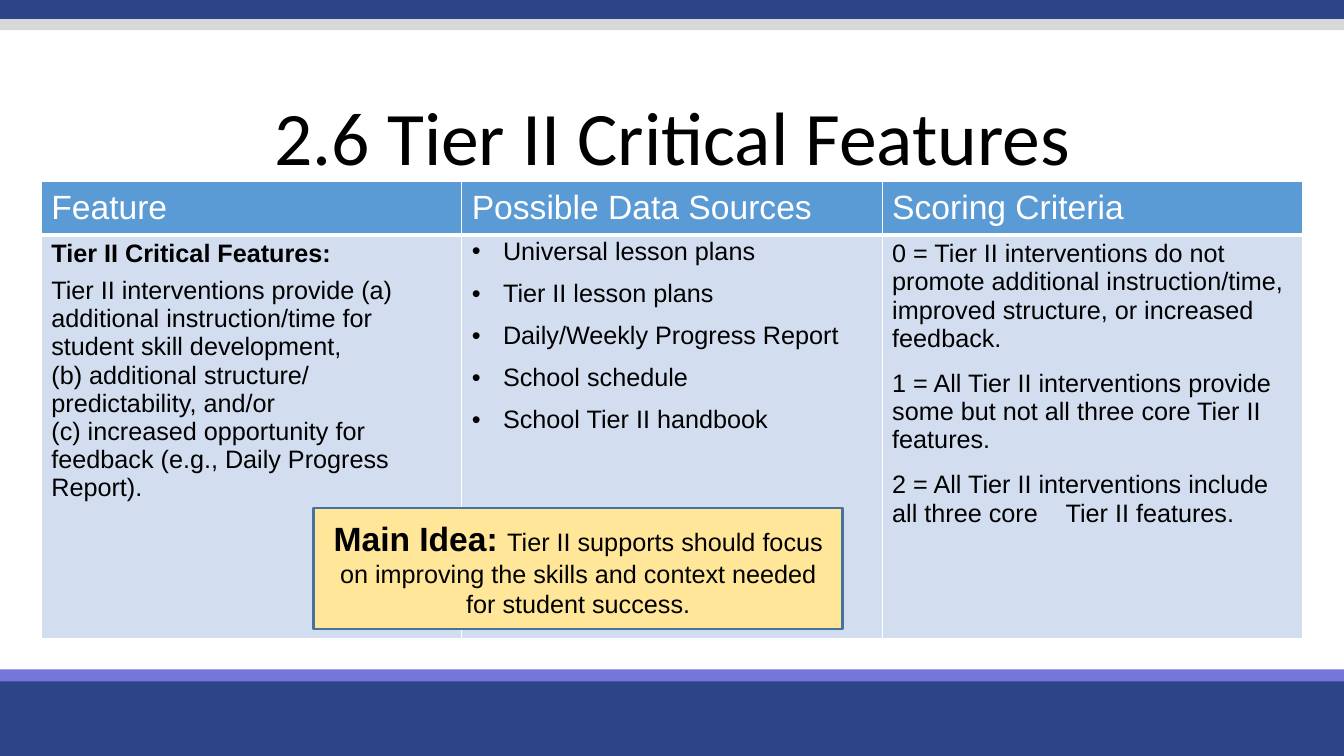
import pptx
import pptx.dml.color
import pptx.enum.shapes
import pptx.enum.text
import pptx.oxml.ns
import pptx.util
from lxml import etree
from pptx.util import Inches

RGBColor = pptx.dml.color.RGBColor
ALIGN = pptx.enum.text.PP_ALIGN
MIDDLE = pptx.enum.text.MSO_ANCHOR.MIDDLE

BLACK = RGBColor(0x00, 0x00, 0x00)
WHITE = RGBColor(0xFF, 0xFF, 0xFF)
NAVY = RGBColor(0x2E, 0x44, 0x88)
GREY = RGBColor(0xD8, 0xD8, 0xD8)
VIOLET = RGBColor(0x74, 0x76, 0xDA)
HEADER_BLUE = RGBColor(0x5B, 0x9B, 0xD5)
PALE_BLUE = RGBColor(0xD2, 0xDE, 0xEF)
YELLOW = RGBColor(0xFF, 0xE6, 0x99)
OUTLINE_BLUE = RGBColor(0x43, 0x73, 0x9E)

SLIDE_WIDTH = 13.33
BARS = [(0, 0.19, NAVY), (0.19, 0.11, GREY), (6.7, 0.8, NAVY), (6.64, 0.12, VIOLET)]

HEADERS = ["Feature", "Possible Data Sources", "Scoring Criteria"]
FEATURE = [
    "Tier II Critical Features:",
    "Tier II interventions provide (a) additional instruction/time for",
    "student skill development,",
    "(b) additional structure/ predictability, and/or",
    "(c) increased opportunity for feedback (e.g., Daily Progress Report).",
]
SOURCES = [
    "Universal lesson plans",
    "Tier II lesson plans",
    "Daily/Weekly Progress Report",
    "School schedule",
    "School Tier II handbook",
]
CRITERIA = [
    "0 = Tier II interventions do not promote additional instruction/time, "
    "improved structure, or increased feedback.",
    "1 = All Tier II interventions provide some but not all three core Tier II features.",
    "2 = All Tier II interventions include all three core\tTier II features.",
]


def add_xml(parent, tag, **attributes):
    return etree.SubElement(parent, pptx.oxml.ns.qn(tag), attributes)


def format_run(r, size, color=BLACK, bold=False, font="Arial"):
    r.font.name = font
    r.font.size = pptx.util.Pt(size)
    r.font.bold = bold
    r.font.color.rgb = color


def add_box(s, left, top, width, height, color):
    """Add a flat rectangle without an outline."""
    sp = s.shapes.add_shape(
        pptx.enum.shapes.MSO_SHAPE.RECTANGLE,
        Inches(left), Inches(top), Inches(width), Inches(height))
    sp.shadow.inherit = False
    sp.fill.solid()
    sp.fill.fore_color.rgb = color
    sp.line.fill.background()
    return sp


def set_title(s, text):
    sp = s.shapes.title
    sp.left, sp.top = Inches(1.41), Inches(0.99)
    sp.width, sp.height = Inches(10.52), Inches(0.81)
    tf = sp.text_frame
    tf.text = text
    tf.vertical_anchor = MIDDLE
    p = tf.paragraphs[0]
    p.alignment = ALIGN.CENTER
    p.line_spacing = 0.9
    format_run(p.runs[0], 54, font="Calibri")


def style_cell(cell, fill, bottom_width=1):
    """Give a cell white borders and a plain fill."""
    tc_pr = cell._tc.get_or_add_tcPr()
    for side, width in zip("LRTB", (1, 1, 1, bottom_width)):
        ln = add_xml(tc_pr, f"a:ln{side}", w=str(pptx.util.Pt(width)))
        add_xml(add_xml(ln, "a:solidFill"), "a:srgbClr", val=str(WHITE))
    cell.fill.solid()
    cell.fill.fore_color.rgb = fill


def fill_cell(cell, lines, size=18, color=BLACK):
    tf = cell.text_frame
    tf.text = "\n".join(lines)
    for p in tf.paragraphs:
        for r in p.runs:
            format_run(r, size, color)
    return tf.paragraphs


def add_bullet(p):
    p.line_spacing = 0.9
    p_pr = p._p.get_or_add_pPr()
    p_pr.set("marL", str(Inches(0.31)))
    p_pr.set("indent", str(Inches(-0.31)))
    add_xml(add_xml(p_pr, "a:buClr"), "a:srgbClr", val=str(BLACK))
    add_xml(p_pr, "a:buFont", typeface="Arial")
    add_xml(p_pr, "a:buChar", char="•")


def add_tab_stop(p, position):
    tabs = add_xml(p._p.get_or_add_pPr(), "a:tabLst")
    add_xml(tabs, "a:tab", pos=str(Inches(position)), algn="l")


def add_feature_table(s):
    table = s.shapes.add_table(
        2, 3, Inches(0.41), Inches(1.8), Inches(12.51), Inches(4.54)).table
    for column in table.columns:
        column.width = Inches(4.17)
    table.rows[0].height = Inches(0.53)
    table.rows[1].height = Inches(4.01)

    for cell, header in zip(table.rows[0].cells, HEADERS):
        style_cell(cell, HEADER_BLUE, bottom_width=3)
        cell.vertical_anchor = MIDDLE
        fill_cell(cell, [header], 24, WHITE)

    for cell in table.rows[1].cells:
        style_cell(cell, PALE_BLUE)
    feature, sources, criteria = [
        fill_cell(cell, lines)
        for cell, lines in zip(table.rows[1].cells, (FEATURE, SOURCES, CRITERIA))]

    feature[0].runs[0].font.bold = True
    feature[0].space_after = pptx.util.Pt(6)
    for p in sources[:-1] + criteria:
        p.space_after = pptx.util.Pt(12)
    for p in sources:
        add_bullet(p)
    add_tab_stop(criteria[-1], 1.72)


def add_main_idea(s):
    sp = add_box(s, 3.11, 5.04, 5.25, 1.2, YELLOW)
    sp.line.color.rgb = OUTLINE_BLUE
    sp.line.width = pptx.util.Pt(2)
    tf = sp.text_frame
    tf.word_wrap = True
    tf.vertical_anchor = MIDDLE
    p = tf.paragraphs[0]
    p.alignment = ALIGN.CENTER
    label, idea = p.add_run(), p.add_run()
    label.text = "Main Idea: "
    idea.text = ("Tier II supports should focus on improving the skills "
                 "and context needed for student success.")
    format_run(label, 24, bold=True)
    format_run(idea, 18)


def main():
    prs = pptx.Presentation()
    prs.slide_width, prs.slide_height = Inches(SLIDE_WIDTH), Inches(7.5)
    s = prs.slides.add_slide(prs.slide_layouts.get_by_name("Title Only"))
    for top, height, color in BARS:
        add_box(s, 0, top, SLIDE_WIDTH, height, color)
    set_title(s, "2.6 Tier II Critical Features")
    add_feature_table(s)
    add_main_idea(s)
    prs.save("out.pptx")


if __name__ == "__main__":
    main()
